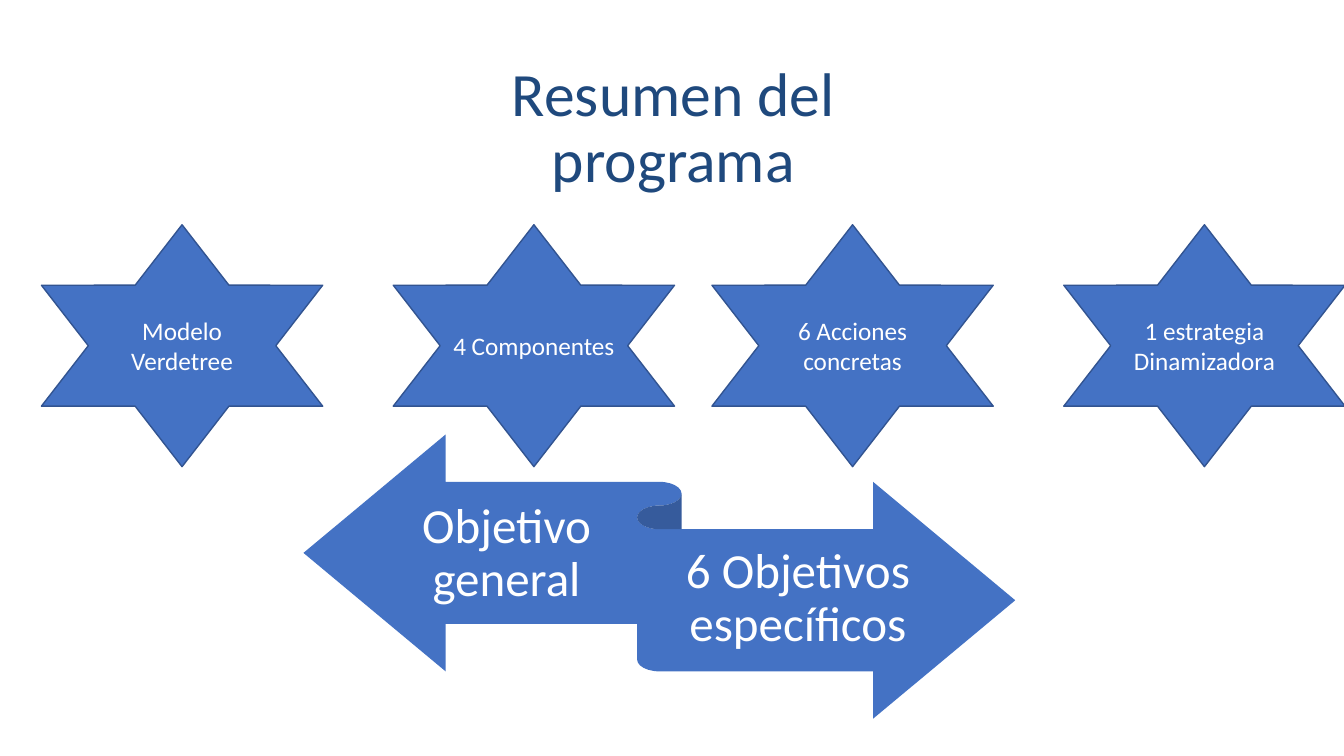
from pptx import Presentation
from pptx.dml.color import RGBColor
from pptx.enum.shapes import MSO_SHAPE as Preset
from pptx.enum.text import MSO_ANCHOR as Anchor, MSO_AUTO_SIZE as AutoSize, PP_ALIGN as Align
from pptx.util import Inches, Pt

NAVY = RGBColor(0x1F, 0x49, 0x7D)
BLUE = RGBColor(0x44, 0x72, 0xC4)
EDGE = RGBColor(0x32, 0x54, 0x91)
WHITE = RGBColor(0xFF, 0xFF, 0xFF)


class SummarySlide:
    """Holds the style and the slide; places are percentages of its size."""

    font_name = "Calibri"

    def __init__(self, deck):
        self.width, self.height = deck.slide_width, deck.slide_height
        self.slide = deck.slides.add_slide(deck.slide_layouts[5])

    def place(self, left, top, width, height):
        return (round(self.width * left / 100), round(self.height * top / 100),
                round(self.width * width / 100), round(self.height * height / 100))

    def set_wording(self, frame, wording, size, color, spacing=None, **insets):
        frame.text = wording
        layout = {"word_wrap": True, "auto_size": AutoSize.NONE,
                  "vertical_anchor": Anchor.MIDDLE, **insets}
        for key, value in layout.items():
            setattr(frame, key, value)
        paragraph = frame.paragraphs[0]
        paragraph.alignment = Align.CENTER
        paragraph.line_spacing = spacing
        font = paragraph.runs[0].font
        for key, value in {"name": self.font_name, "size": Pt(size)}.items():
            setattr(font, key, value)
        font.color.rgb = color

    def title(self, wording, *area):
        heading = self.slide.shapes.title
        for key, value in zip(("left", "top", "width", "height"), self.place(*area)):
            setattr(heading, key, value)
        self.set_wording(heading.text_frame, wording, 44, NAVY, 0.9)

    def figure(self, preset, *area):
        figure = self.slide.shapes.add_shape(preset, *self.place(*area))
        figure.shadow.inherit = False
        figure.fill.solid()
        figure.fill.fore_color.rgb = BLUE
        return figure

    def star(self, wording, *area):
        star = self.figure(Preset.STAR_6_POINT, *area)
        star.line.color.rgb = EDGE
        star.line.width = Pt(1)
        self.set_wording(star.text_frame, wording, 18, WHITE)

    def ribbon(self, *area):
        self.figure(Preset.LEFT_RIGHT_RIBBON, *area).line.fill.background()

    def label(self, wording, *area):
        label = self.slide.shapes.add_textbox(*self.place(*area))
        self.set_wording(label.text_frame, wording, 35, WHITE, 0.9,
                         margin_left=0, margin_right=0,
                         margin_top=Inches(0.14), margin_bottom=Inches(0.15))


def main():
    deck = Presentation()
    deck.slide_width, deck.slide_height = Inches(13.33), Inches(7.5)
    summary = SummarySlide(deck)
    summary.title("Resumen del programa", 28.58, 16.27, 43.06, 1.73)

    pillars = ("Modelo Verdetree", "4 Componentes",
               "6 Acciones concretas", "1 estrategia Dinamizadora")
    for index, pillar in enumerate(pillars):
        pair, member = divmod(index, 2)
        summary.star(pillar, 3.08 + 49.89 * pair + 26.18 * member, 29.73, 20.93, 32)

    summary.ribbon(22.58, 57.47, 52.96, 37.6)
    summary.label("Objetivo general", 28.96, 64.13, 17.48, 18.4)
    summary.label("6 Objetivos específicos", 49.06, 70.13, 20.63, 18.4)
    deck.save("out.pptx")


if __name__ == "__main__":
    main()
